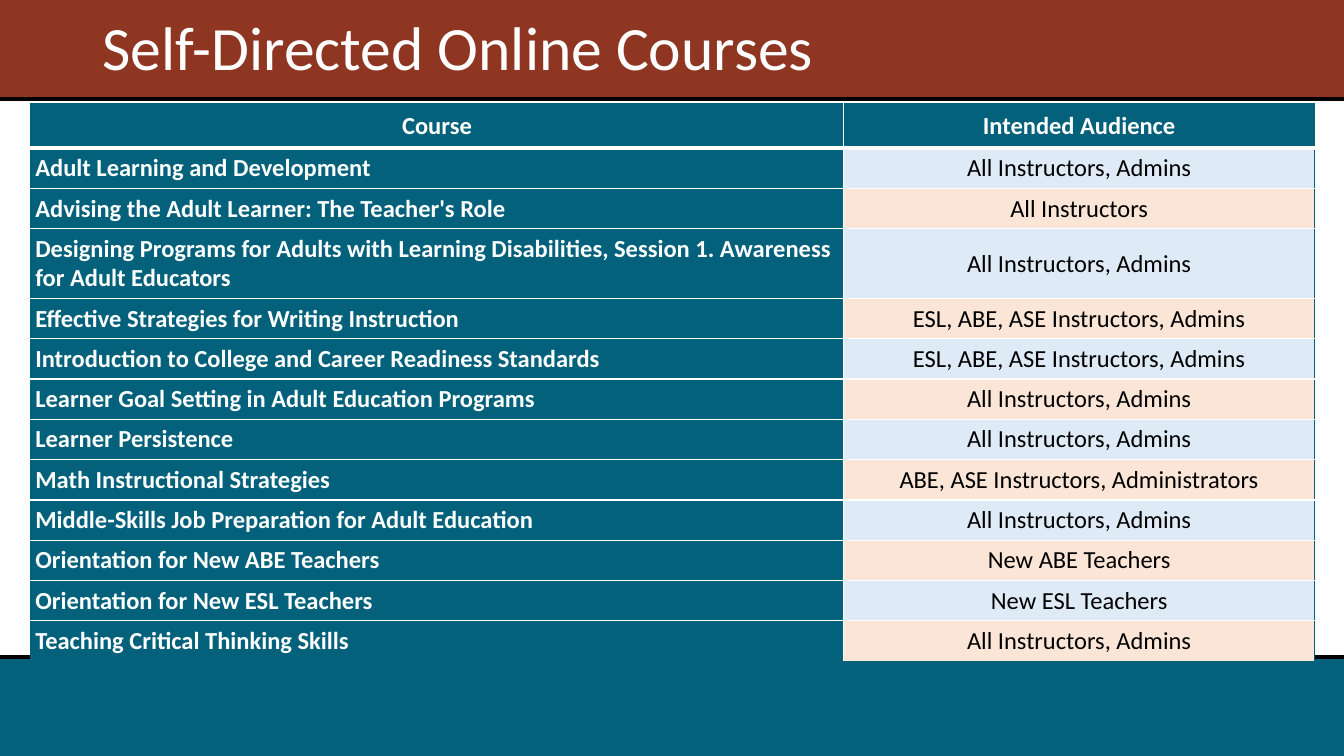
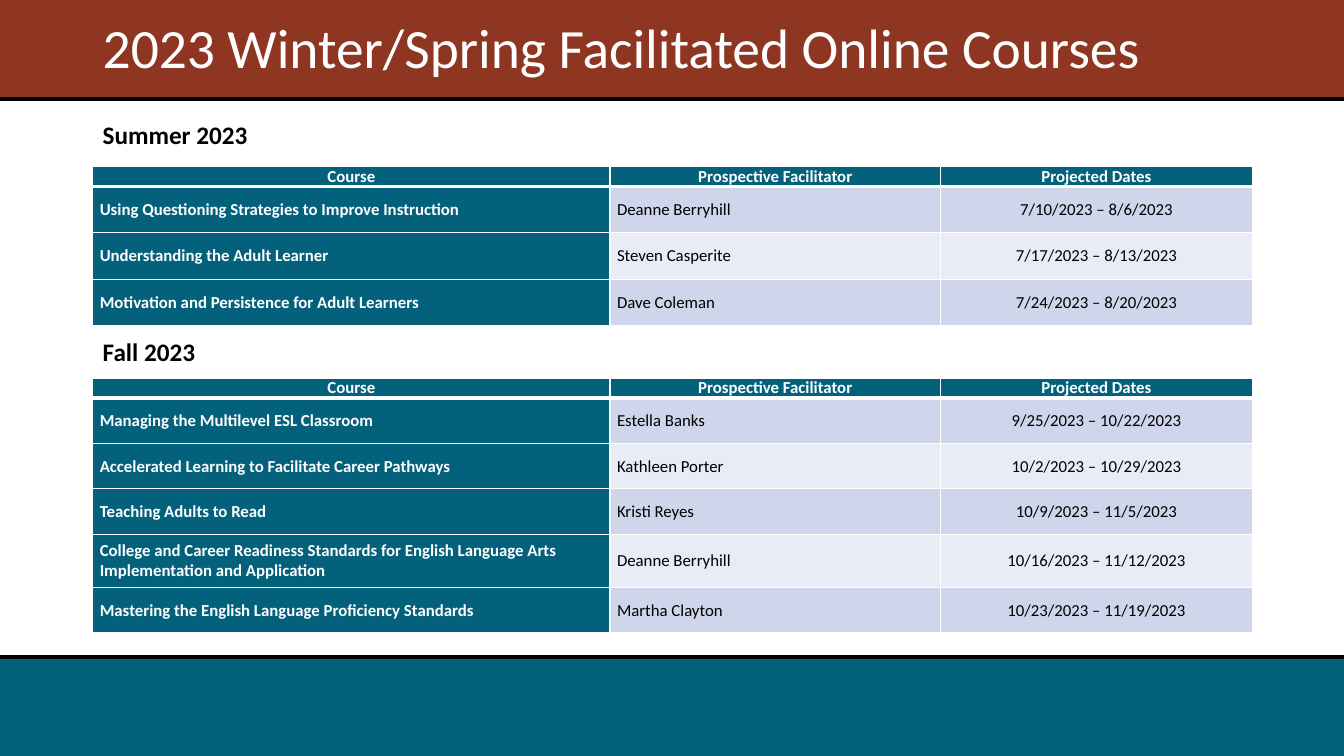
from lxml import etree
from pptx import Presentation, util as u
from pptx.dml.color import RGBColor
from pptx.enum import shapes, text
from pptx.oxml import ns

WIDTH, HEIGHT = 13.33, 7.5
BAND = 1
RULE_INSET = 0.02
MARGIN = 0.92
CONTENT = WIDTH - 2 * MARGIN
FONT = "Calibri"
RUST, TEAL, BLACK, WHITE = "8E3622", "03617B", "000000", "FFFFFF"
LEFT, CENTER = text.PP_ALIGN.LEFT, text.PP_ALIGN.CENTER
MIDDLE, TOP = text.MSO_ANCHOR.MIDDLE, text.MSO_ANCHOR.TOP

SELF_DIRECTED = [
    ("Course", "Intended Audience"),
    ("Adult Learning and Development", "All Instructors, Admins"),
    ("Advising the Adult Learner: The Teacher's Role", "All Instructors"),
    ("Designing Programs for Adults with Learning Disabilities, Session 1. "
     "Awareness for Adult Educators", "All Instructors, Admins"),
    ("Effective Strategies for Writing Instruction",
     "ESL, ABE, ASE Instructors, Admins"),
    ("Introduction to College and Career Readiness Standards",
     "ESL, ABE, ASE Instructors, Admins"),
    ("Learner Goal Setting in Adult Education Programs",
     "All Instructors, Admins"),
    ("Learner Persistence", "All Instructors, Admins"),
    ("Math Instructional Strategies", "ABE, ASE Instructors, Administrators"),
    ("Middle-Skills Job Preparation for Adult Education",
     "All Instructors, Admins"),
    ("Orientation for New ABE Teachers", "New ABE Teachers"),
    ("Orientation for New ESL Teachers", "New ESL Teachers"),
    ("Teaching Critical Thinking Skills", "All Instructors, Admins"),
]
FACILITATED_HEADER = ("Course", "Prospective Facilitator", "Projected Dates")
SUMMER = [
    ("Using Questioning Strategies to Improve Instruction",
     "Deanne Berryhill", "7/10/2023 – 8/6/2023"),
    ("Understanding the Adult Learner",
     "Steven Casperite", "7/17/2023 – 8/13/2023"),
    ("Motivation and Persistence for Adult Learners",
     "Dave Coleman", "7/24/2023 – 8/20/2023"),
]
FALL = [
    ("Managing the Multilevel ESL Classroom",
     "Estella Banks", "9/25/2023 – 10/22/2023"),
    ("Accelerated Learning to Facilitate Career Pathways",
     "Kathleen Porter", "10/2/2023 – 10/29/2023"),
    ("Teaching Adults to Read", "Kristi Reyes", "10/9/2023 – 11/5/2023"),
    ("College and Career Readiness Standards for English Language Arts "
     "Implementation and Application",
     "Deanne Berryhill", "10/16/2023 – 11/12/2023"),
    ("Mastering the English Language Proficiency Standards",
     "Martha Clayton", "10/23/2023 – 11/19/2023"),
]


def color(value):
    return RGBColor.from_string(value)


def inches(*lengths):
    return [u.Inches(length) for length in lengths]


def style_font(para, size, ink, bold=False):
    font = para.font
    font.name, font.size, font.bold = FONT, u.Pt(size), bold
    font.color.rgb = color(ink)


def add_band(page, top, fill):
    band = page.shapes.add_shape(shapes.MSO_SHAPE.RECTANGLE,
                                 *inches(0, top, WIDTH, BAND))
    band.shadow.inherit = False
    band.fill.solid()
    band.fill.fore_color.rgb = color(fill)
    band.line.fill.background()


def add_rule(page, top):
    rule = page.shapes.add_connector(shapes.MSO_CONNECTOR.STRAIGHT,
                                     *inches(0, top, WIDTH, top))
    rule.line.color.rgb = color(BLACK)
    rule.line.width = u.Pt(3)
    etree.SubElement(rule._element.spPr, ns.qn("a:effectLst"))


def add_text(page, area, words, size, ink, bold=False, anchor=TOP, spacing=1):
    box = page.shapes.add_textbox(*inches(*area))
    frame = box.text_frame
    frame.word_wrap = True
    frame.vertical_anchor = anchor
    para = frame.paragraphs[0]
    para.text = words
    para.line_spacing = spacing
    style_font(para, size, ink, bold)


def add_page(deck, title, size):
    """Add a blank slide with the shared bands, rules and title."""
    page = deck.slides.add_slide(deck.slide_layouts[6])
    add_band(page, 0, RUST)
    add_band(page, HEIGHT - BAND, TEAL)
    add_rule(page, BAND - RULE_INSET)
    add_rule(page, HEIGHT - BAND + RULE_INSET)
    add_text(page, (MARGIN, 0.04, CONTENT, 0.93), title, size, WHITE,
             anchor=MIDDLE, spacing=0.9)
    return page


def set_borders(cell, borders):
    """Draw (side, colour, points) borders; call before the cell is filled."""
    properties = cell._tc.get_or_add_tcPr()
    for side, ink, points in borders:
        line = etree.SubElement(properties, ns.qn(f"a:ln{side}"),
                                w=str(u.Pt(points)))
        fill = etree.SubElement(line, ns.qn("a:solidFill"))
        etree.SubElement(fill, ns.qn("a:srgbClr"), val=ink)


def style_cell(cell, words, size, fill, ink, bold, align, insets):
    cell.fill.solid()
    cell.fill.fore_color.rgb = color(fill)
    cell.vertical_anchor = MIDDLE
    side, end = inches(*insets)
    cell.margin_left = cell.margin_right = side
    cell.margin_top = cell.margin_bottom = end
    para = cell.text_frame.paragraphs[0]
    para.text = words
    para.alignment = align
    para.line_spacing = 0.99
    style_font(para, size, ink, bold)


def add_course_table(page, left, top, widths, heights, rows, size, stripes,
                     aligns, edge=WHITE, insets=(0.07, 0)):
    """Add a table with a teal header row and first column."""
    table = page.shapes.add_table(
        len(rows), len(widths),
        *inches(left, top, sum(widths), sum(heights))).table
    table.horz_banding = False
    for column, width in zip(table.columns, widths):
        column.width = u.Inches(width)
    for row, height in zip(table.rows, heights):
        row.height = u.Inches(height)

    last_row, last_column = len(rows) - 1, len(widths) - 1
    for r, row in enumerate(rows):
        header = r == 0
        for c, words in enumerate(row):
            cell = table.cell(r, c)
            set_borders(cell, [
                ("L", edge if c == 0 else WHITE, 1),
                ("R", edge if c == last_column else WHITE, 1),
                ("T", edge if header else WHITE, 3 if r == 1 else 1),
                ("B", edge if r == last_row else WHITE, 3 if header else 1),
            ])
            strong = header or c == 0
            style_cell(cell, words, size,
                       TEAL if strong else stripes[(r - 1) % 2],
                       WHITE if strong else BLACK, strong,
                       CENTER if header else aligns[c],
                       (0.07, 0) if header else insets)


def add_term(page, top, name, gap, courses, heights):
    """Add a term heading with its table of facilitated courses below."""
    add_text(page, (MARGIN, top, CONTENT * 0.58, 0.4), name, 18, BLACK, True)
    add_course_table(page, MARGIN, top + gap, (5.13, 3.28, 3.09),
                     [0.2] + heights, [FACILITATED_HEADER] + courses, 12,
                     ("CFD5EA", "E9EBF5"), (LEFT, LEFT, CENTER))


def main():
    deck = Presentation()
    deck.slide_width, deck.slide_height = inches(WIDTH, HEIGHT)

    page = add_page(deck, "Self-Directed Online Courses", 44)
    heights = [0.44] + [0.4] * 2 + [0.69] + [0.4] * 9
    add_course_table(page, 0.3, 1.03, (8.07, 4.67), heights, SELF_DIRECTED,
                     17.5, ("DEEBF7", "FBE5D6"), (LEFT, CENTER),
                     edge=TEAL, insets=(0.05, 0.05))

    page = add_page(deck, "2023 Winter/Spring Facilitated Online Courses", 39.6)
    add_term(page, 1.13, "Summer 2023", 0.52, SUMMER, [0.46] * 3)
    add_term(page, 3.29, "Fall 2023", 0.46, FALL,
             [0.45] * 3 + [0.53, 0.45])

    deck.save("out.pptx")


if __name__ == "__main__":
    main()
